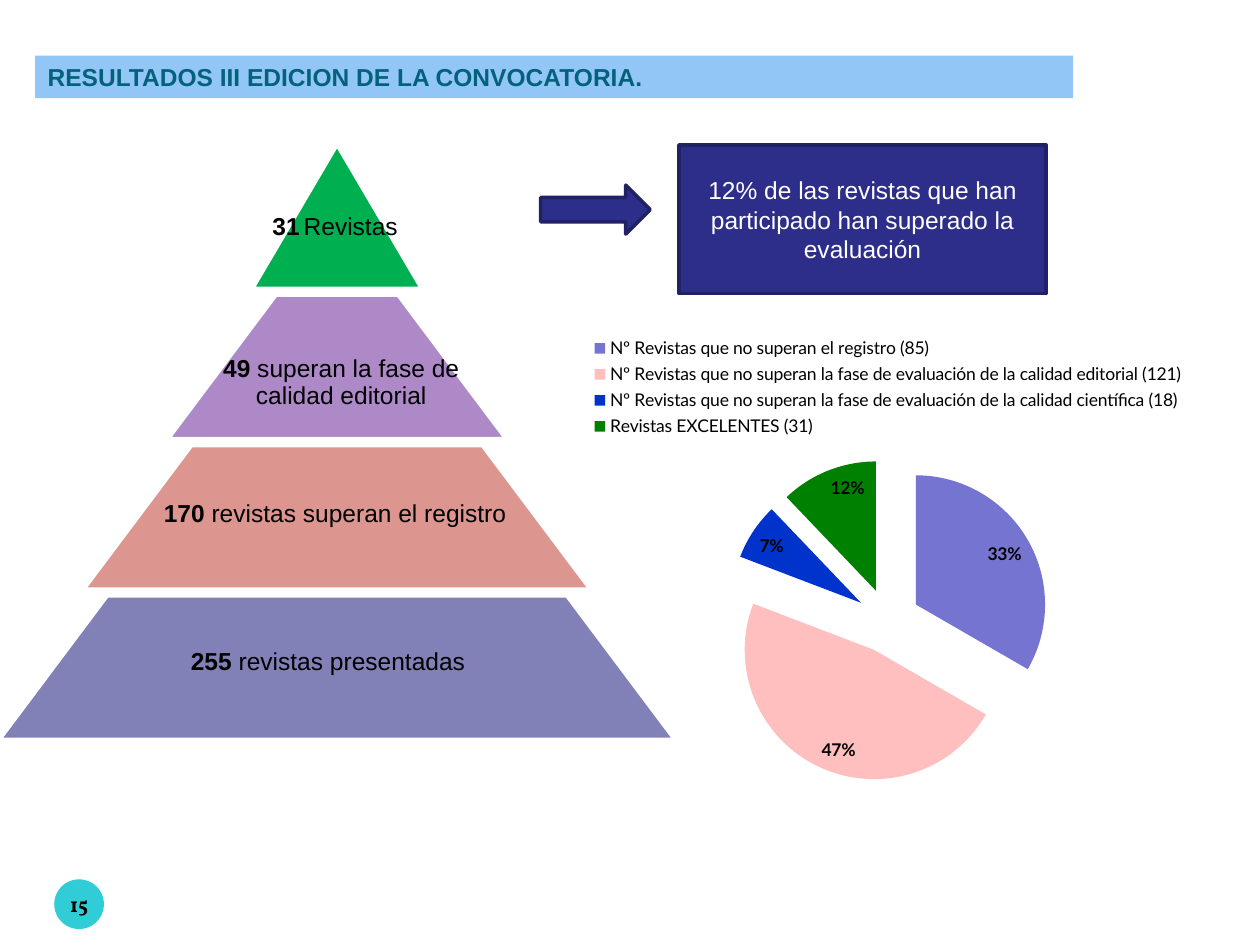
import pptx
import pptx.util
import pptx.chart.data
import pptx.dml.color
import pptx.enum.chart
import pptx.enum.shapes
import pptx.enum.text
import pptx.oxml.ns
from lxml import etree

Pt = pptx.util.Pt
qn = pptx.oxml.ns.qn
SHAPE = pptx.enum.shapes.MSO_SHAPE
ALIGN = pptx.enum.text.PP_ALIGN
MIDDLE = pptx.enum.text.MSO_ANCHOR.MIDDLE

COLORS = {
    "black": "000000", "white": "FFFFFF", "navy": "2D2D8A", "navy_edge": "212166",
    "band": "91C6F7", "title": "04617B", "badge": "30CDD7",
    "green": "00B050", "purple": "7030A0", "red": "B10E01",
}
TITLE = "RESULTADOS III EDICION DE LA CONVOCATORIA."
MESSAGE = "12% de las revistas que han participado han superado la evaluación"
PAGE = "15"

# Top to bottom: fill, opacity in %, label centre x and y, label width, (text, bold, size) runs
TIERS = [
    ("green", 100, 191.5, 130.3, 178, [("31", True, 14), (" ", False, 8), ("Revistas", False, 14)]),
    ("purple", 57, 195, 219, 170,
     [("49", True, 14), (" superan la fase de calidad editorial", False, 14)]),
    ("red", 44, 191.5, 293.8, 250,
     [("170 ", True, 14), ("revistas superan el registro", False, 14)]),
    ("navy", 60, 187.5, 378.8, 313, [("255", True, 14), (" revistas presentadas", False, 14)]),
]
TIER_TOP, TIER_PITCH, TIER_HEIGHT, TIER_STEP, AXIS_X = 82.8, 85.9, 82, 96.4, 192.6

# Category, value, colour
SLICES = [
    ("Nº Revistas que no superan el registro (85)", 33, "7575D1"),
    ("Nº Revistas que no superan la fase de evaluación de la calidad editorial (121)", 47, "FFBFBF"),
    ("Nº Revistas que no superan la fase de evaluación de la calidad científica (18)", 7, "0033CC"),
    ("Revistas EXCELENTES (31)", 12, "008000"),
]


def rgb(name):
    return pptx.dml.color.RGBColor.from_string(COLORS.get(name, name))


def set_font(font, color="black", **values):
    for key, value in {"name": "Arial", "size": Pt(14), "bold": False, **values}.items():
        setattr(font, key, value)
    font.color.rgb = rgb(color)


def set_frame(tf, inset=None, **values):
    for key, value in {"word_wrap": True, "vertical_anchor": MIDDLE, **values}.items():
        setattr(tf, key, value)
    if inset is not None:
        for side in ("left", "top", "right", "bottom"):
            setattr(tf, "margin_" + side, Pt(inset))


def add_shape(slide, kind, box, fill, line=None, opacity=100):
    sp = slide.shapes.add_shape(kind, *map(Pt, box))
    sp.shadow.inherit = False
    sp.fill.solid()
    sp.fill.fore_color.rgb = rgb(fill)
    if opacity < 100:
        clr = sp.fill._xPr.find(qn("a:solidFill"))[0]
        etree.SubElement(clr, qn("a:alpha"), val=str(opacity * 1000))
    if line:
        sp.line.color.rgb = rgb(line)
        sp.line.width = Pt(2)
    else:
        sp.line.fill.background()
    return sp


def add_runs(p, runs, color="black", name="Arial"):
    p.alignment = ALIGN.CENTER
    for text, bold, size in runs:
        r = p.add_run()
        r.text = text
        set_font(r.font, color, name=name, bold=bold, size=Pt(size))


def add_title(slide):
    sp = slide.shapes.title
    sp.left, sp.top, sp.width, sp.height = map(Pt, (20, 31.8, 593.3, 24.3))
    sp.fill.solid()
    sp.fill.fore_color.rgb = rgb("band")
    sp.text_frame.text = TITLE
    set_frame(sp.text_frame, auto_size=pptx.enum.text.MSO_AUTO_SIZE.NONE)
    p = sp.text_frame.paragraphs[0]
    p.alignment = ALIGN.LEFT
    set_font(p.runs[0].font, "title", bold=True)


def add_pyramid(slide):
    for i, (fill, opacity, *_) in enumerate(TIERS):
        width = TIER_STEP * (i + 1)
        box = (AXIS_X - width / 2, TIER_TOP + i * TIER_PITCH, width, TIER_HEIGHT)
        sp = add_shape(slide, SHAPE.TRAPEZOID, box, fill, "white", opacity)
        sp.adjustments[0] = 0.75
    for _, _, x, y, width, runs in TIERS:
        box = (x - width / 2, y - TIER_HEIGHT / 2, width, TIER_HEIGHT)
        tf = slide.shapes.add_textbox(*map(Pt, box)).text_frame
        set_frame(tf, inset=2)
        tf.paragraphs[0].line_spacing = 0.9
        add_runs(tf.paragraphs[0], runs)


def add_pie(slide):
    data = pptx.chart.data.CategoryChartData()
    data.categories = [name for name, _, _ in SLICES]
    data.add_series("Series 1", [value for _, value, _ in SLICES])
    chart = slide.shapes.add_chart(
        pptx.enum.chart.XL_CHART_TYPE.PIE, *map(Pt, (309, 185, 396.7, 272)), data).chart
    set_font(chart.font, name="Lato", size=Pt(10))
    chart.has_title = False
    chart.has_legend = True
    chart.legend.position = pptx.enum.chart.XL_LEGEND_POSITION.TOP
    chart.legend.include_in_layout = False

    plot = chart.plots[0]
    plot.vary_by_categories = True
    plot.has_data_labels = True
    labels = plot.data_labels
    for key, value in {"show_percentage": True, "show_value": False, "number_format": "0%",
                       "number_format_is_linked": False,
                       "position": pptx.enum.chart.XL_LABEL_POSITION.INSIDE_END}.items():
        setattr(labels, key, value)
    set_font(labels.font, name="Lato", size=Pt(10), bold=True)

    series = plot.series[0]
    for i, (_, _, color) in enumerate(SLICES):
        fill = series.points[i].format.fill
        fill.solid()
        fill.fore_color.rgb = rgb(color)
    explosion = etree.Element(qn("c:explosion"), val="25")
    series._element.find(qn("c:tx")).addnext(explosion)


def main():
    prs = pptx.Presentation()
    prs.slide_width, prs.slide_height = Pt(720), Pt(540)
    slide = prs.slides.add_slide(prs.slide_layouts[5])
    add_title(slide)

    badge = add_shape(slide, SHAPE.OVAL, (31, 502.5, 28.4, 28.4), "badge")
    set_frame(badge.text_frame, inset=0, margin_right=Pt(2), word_wrap=False)
    add_runs(badge.text_frame.paragraphs[0], [(PAGE, True, 12)], name="Vollkorn")

    add_shape(slide, SHAPE.RIGHT_ARROW, (309, 105.8, 62.6, 28), "navy", "navy_edge")
    message = add_shape(slide, SHAPE.RECTANGLE, (388, 82.8, 209.8, 85), "navy", "navy_edge")
    set_frame(message.text_frame)
    add_runs(message.text_frame.paragraphs[0], [(MESSAGE, False, 14)], "white")

    add_pyramid(slide)
    add_pie(slide)
    prs.save("out.pptx")


if __name__ == "__main__":
    main()
